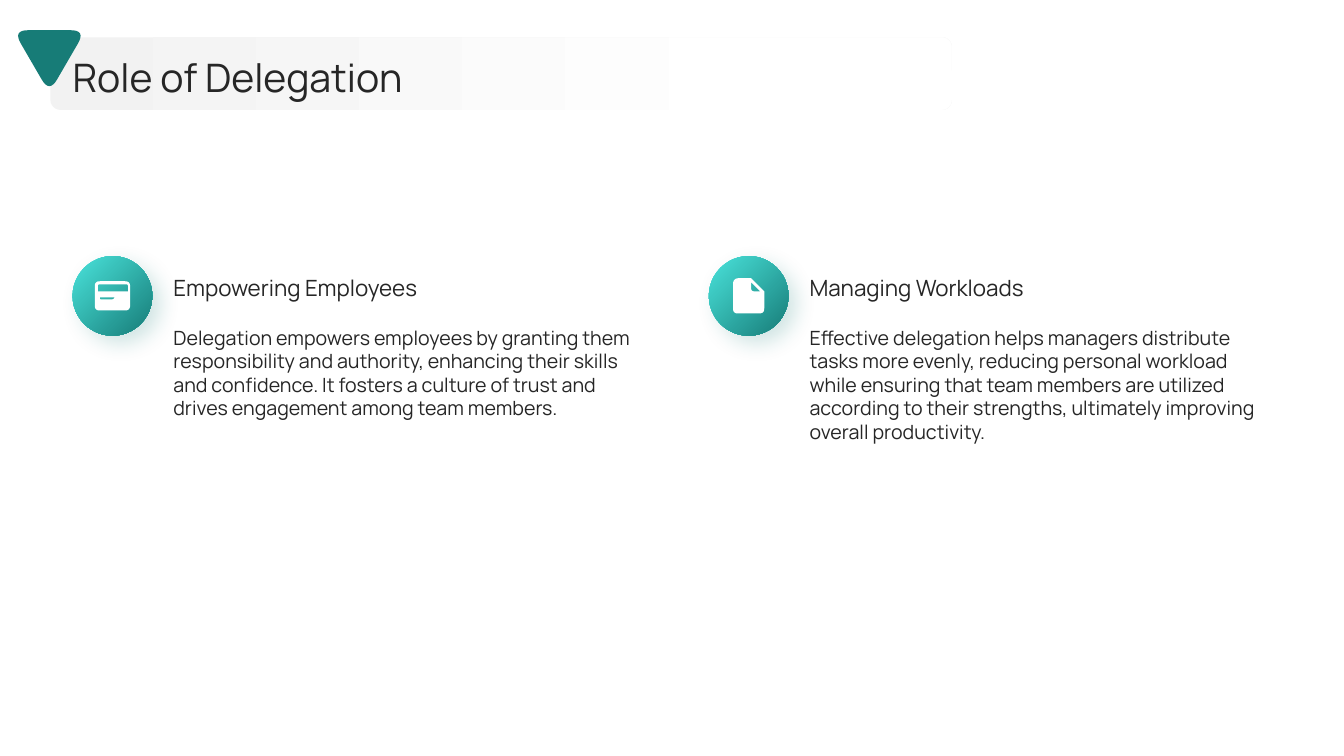
import lxml.etree
import pptx
import pptx.dml.color
import pptx.enum.shapes
import pptx.enum.text
import pptx.oxml.ns
import pptx.util

Inches = pptx.util.Inches
Pt = pptx.util.Pt
Kind = pptx.enum.shapes.MSO_SHAPE
Anchor = pptx.enum.text.MSO_ANCHOR
qn = pptx.oxml.ns.qn

INK, TEAL, AQUA, WHITE, GREY = "262626", "177C77", "47DDD6", "FFFFFF", "F2F2F2"
LEFT, STEP = 0.72, 6.31

deck = pptx.Presentation()
deck.slide_width = Inches(13.33)
deck.slide_height = Inches(7.5)
slide = deck.slides.add_slide(deck.slide_layouts[6])
shapes = slide.shapes


def hue(code):
    return pptx.dml.color.RGBColor.from_string(code)


def trace(rings, code):
    """Fill closed rings of (x, y, radius) corners; inner rings become holes."""
    pen = None
    for ring in rings:
        dots = []
        for i, (x, y, r) in enumerate(ring):
            ends = []
            for px, py, _ in (ring[i - 1], ring[(i + 1) % len(ring)]):
                part = r / ((px - x) ** 2 + (py - y) ** 2) ** 0.5
                ends.append((x + (px - x) * part, y + (py - y) * part))
            (ax, ay), (bx, by) = ends
            for t in [n / 8 for n in range(9)] if r else [0]:
                u, v, w = (1 - t) ** 2, 2 * t * (1 - t), t * t
                dots.append((Inches(u * ax + v * x + w * bx),
                             Inches(u * ay + v * y + w * by)))
        if pen is None:
            pen = shapes.build_freeform(*dots[0], scale=1.0)
        else:
            pen.move_to(*dots[0])
        pen.add_line_segments(dots[1:], close=True)
    form = pen.convert_to_shape()
    form.shadow.inherit = False
    form.fill.solid()
    form.fill.fore_color.rgb = hue(code)
    form.line.fill.background()


# Title bar and icon discs
disc = [(0.06, AQUA), (1, TEAL)]
panels = [
    (Kind.ROUNDED_RECTANGLE, (0.5, 0.37, 8.94, 0.72), [(0, GREY), (0.8, WHITE)], 0),
    (Kind.OVAL, (LEFT, 2.54, 0.79, 0.79), disc, 315),
    (Kind.OVAL, (LEFT + STEP, 2.54, 0.79, 0.79), disc, 315),
]
for kind, box, stops, angle in panels:
    panel = shapes.add_shape(kind, *map(Inches, box))
    panel.shadow.inherit = False
    panel.line.fill.background()
    panel.fill.gradient()
    panel.fill.gradient_angle = angle
    for stop, (place, code) in zip(panel.fill.gradient_stops, stops):
        stop.position = place
        stop.color.rgb = hue(code)
    if kind == Kind.ROUNDED_RECTANGLE:
        panel.adjustments[0] = 0.14
    else:
        glow = lxml.etree.SubElement(
            panel._element.spPr.find(qn("a:effectLst")), qn("a:outerShdw"),
            blurRad=str(Pt(15)), dist=str(Pt(8)), dir=str(45 * 60000),
            algn="tl", rotWithShape="0")
        tone = lxml.etree.SubElement(glow, qn("a:srgbClr"), val=TEAL)
        lxml.etree.SubElement(tone, qn("a:alpha"), val="20000")

# Title marker, card icon, file icon
trace([[(0.13, 0.3, 0.15), (0.85, 0.3, 0.15), (0.49, 0.92, 0.15)]], TEAL)
trace([
    [(0.94, 2.79, 0.05), (1.29, 2.79, 0.05), (1.29, 3.08, 0.05), (0.94, 3.08, 0.05)],
    [(0.97, 2.82, 0.02), (1.27, 2.82, 0.02), (1.27, 2.89, 0), (0.97, 2.89, 0)],
    [(0.99, 2.95, 0), (1.14, 2.95, 0.01), (1.12, 2.97, 0.01), (0.99, 2.97, 0.01)],
], WHITE)
trace([
    [(7.27, 2.76, 0.06), (7.45, 2.76, 0), (7.58, 2.89, 0),
     (7.58, 3.11, 0.05), (7.27, 3.11, 0.05)],
    [(7.45, 2.8, 0), (7.45, 2.89, 0.03), (7.54, 2.89, 0)],
], WHITE)

# Text
topics = [
    ("Empowering Employees",
     "Delegation empowers employees by granting them responsibility and "
     "authority, enhancing their skills and confidence. It fosters a culture "
     "of trust and drives engagement among team members."),
    ("Managing Workloads",
     "Effective delegation helps managers distribute tasks more evenly, "
     "reducing personal workload while ensuring that team members are utilized "
     "according to their strengths, ultimately improving overall productivity."),
]
texts = [("Role of Delegation", (LEFT, 0.51, 11.67, 0.51), 28, Anchor.MIDDLE)]
for i, (head, body) in enumerate(topics):
    x = LEFT + 1 + i * STEP
    texts.append((head, (x, 2.5, 4.57, 0.71), 16, Anchor.MIDDLE))
    texts.append((body, (x, 3.23, 4.57, 2.23), 14, Anchor.TOP))

for words, box, size, anchor in texts:
    frame = shapes.add_textbox(*map(Inches, box)).text_frame
    layout = {"word_wrap": True, "vertical_anchor": anchor, "margin_left": 0,
              "margin_top": 0, "margin_right": 0, "margin_bottom": 0}
    for name, value in layout.items():
        setattr(frame, name, value)
    run = frame.paragraphs[0].add_run()
    run.text = words
    for name, value in {"name": "Manrope", "size": Pt(size)}.items():
        setattr(run.font, name, value)
    run.font.color.rgb = hue(INK)

deck.save("out.pptx")
